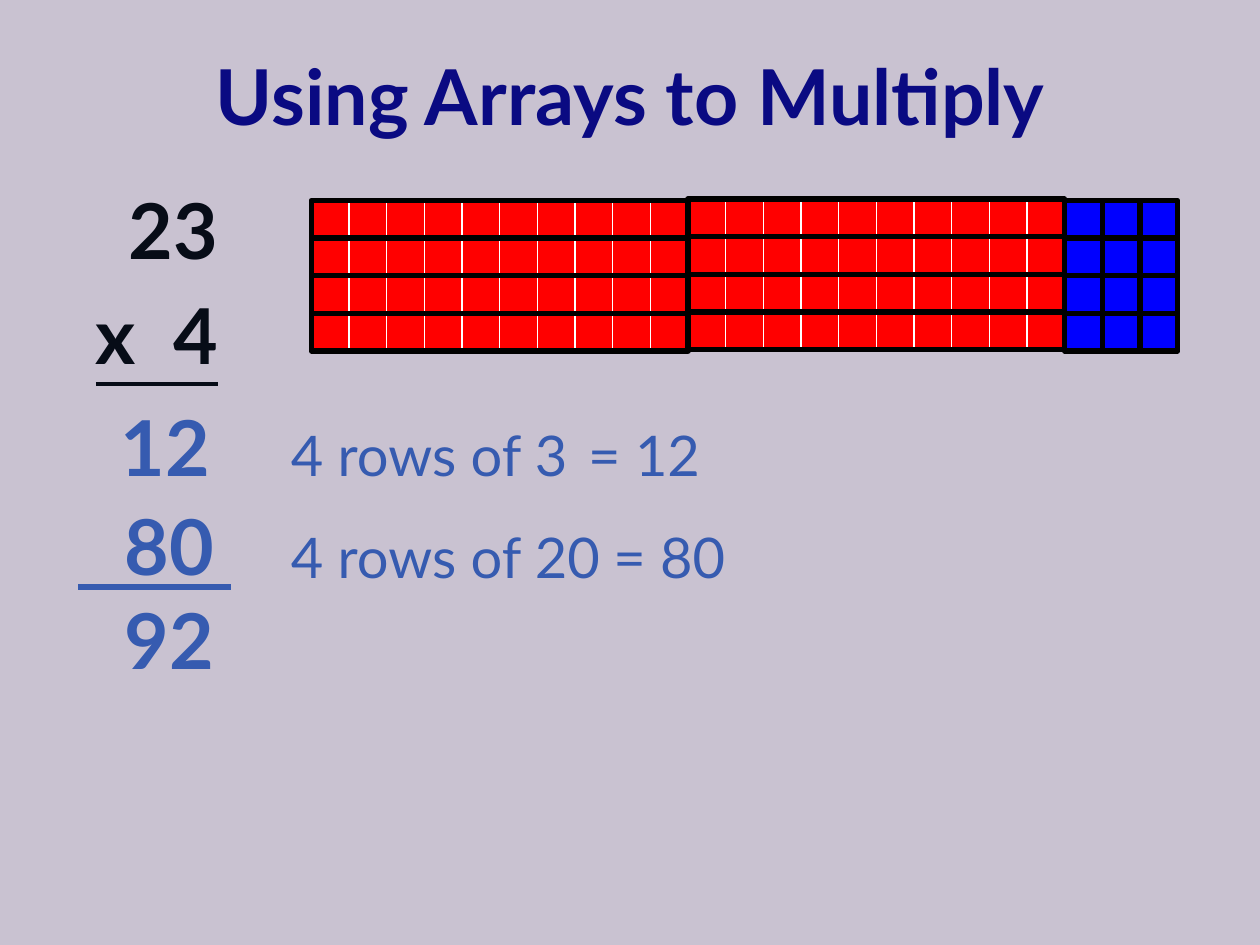
from pptx import Presentation
from pptx.dml.color import RGBColor
from pptx.enum.shapes import MSO_CONNECTOR, MSO_SHAPE
from pptx.enum.text import MSO_ANCHOR, PP_ALIGN
from pptx.oxml.ns import qn
from pptx.util import Inches, Pt
from lxml import etree

RECT = MSO_SHAPE.RECTANGLE
STRAIGHT = MSO_CONNECTOR.STRAIGHT
LEFT, CENTER, RIGHT = PP_ALIGN.LEFT, PP_ALIGN.CENTER, PP_ALIGN.RIGHT
TOP, MIDDLE = MSO_ANCHOR.TOP, MSO_ANCHOR.MIDDLE

THEME = {
    "font": "Lato", "big": 44, "medium": 32,
    "background": "C9C2D1", "title": "0A0A82", "ink": "070C17",
    "answer": "365BB0", "tens": "FF0000", "ones": "0000FF",
    "grid": "FFFFFF", "outline": "000000",
    "thin": 0.75, "thick": 3, "sum": 3.75,
}

# Content: text with its left, top and width
TITLE = "Using Arrays to Multiply"
PROBLEM = ["23", "x  4"]
RESULTS = [("12", 0.86, 3.12), ("80", 0.89, 3.91), ("92", 0.89, 4.65)]
STEPS = [
    ("4 rows of 3", 2.21, 3.29, 2.98), ("4 rows of 20", 2.21, 4.1, 2.98),
    ("= 12", 4.57, 3.29, 1.2), ("= 80", 4.77, 4.1, 1.2),
]
SUM_LINE = (0.62, 1.83, 4.66)

# Array: 4 rows of 23, as two blocks of ten and one of three
ROWS, TEN, ONES = 4, 10, 3
CELL = 0.299
ARRAY_LEFT, ARRAY_TOP = 2.47, 1.58


def color(name):
    return RGBColor.from_string(THEME[name])


def add_text(s, lines, box, size, ink, bold=False, align=LEFT, anchor=TOP):
    tf = s.shapes.add_textbox(*map(Inches, box)).text_frame
    tf.word_wrap = True
    tf.vertical_anchor = anchor
    tf.text = "\n".join(lines)
    for p in tf.paragraphs:
        p.alignment = align
        font = p.runs[0].font
        font.name, font.size, font.bold = THEME["font"], Pt(THEME[size]), bold
        font.color.rgb = color(ink)
    return tf


def add_rect(group, x, y, w, h, fill, line, width):
    sp = group.shapes.add_shape(RECT, *map(Inches, (x, y, w, h)))
    sp.shadow.inherit = False
    if fill:
        sp.fill.solid()
        sp.fill.fore_color.rgb = color(fill)
    else:
        sp.fill.background()
    sp.line.color.rgb = color(line)
    sp.line.width = Pt(THEME[width])


def add_cells(s, left, top, columns, fill, line, width):
    group = s.shapes.add_group_shape()
    for row in range(ROWS):
        for col in range(columns):
            add_rect(group, left + col * CELL, top + row * CELL,
                     CELL, CELL, fill, line, width)


def add_row_frames(s, left, top):
    group = s.shapes.add_group_shape()
    for row in range(ROWS):
        add_rect(group, left, top + row * CELL, TEN * CELL, CELL,
                 None, "outline", "thick")


def main():
    prs = Presentation()
    prs.slide_width, prs.slide_height = Inches(10), Inches(7.5)
    s = prs.slides.add_slide(prs.slide_layouts[6])
    s.background.fill.solid()
    s.background.fill.fore_color.rgb = color("background")

    # Title and the multiplication problem
    add_text(s, [TITLE], (0.17, 0.17, 9.67, 1.17), "big", "title",
             True, CENTER, MIDDLE)
    tf = add_text(s, PROBLEM, (0.08, 1.4, 1.75, 2.17), "big", "ink",
                  True, RIGHT)
    p = tf.paragraphs[-1]
    p.space_before = Pt(7)
    p.runs[0].font.underline = True

    # Partial products, their explanations and the sum line
    for text, x, y, w in STEPS:
        add_text(s, [text], (x, y, w, 0.63), "medium", "answer")
    for text, x, y in RESULTS:
        add_text(s, [text], (x, y, 1.2, 0.83), "big", "answer", True)
    x1, x2, y = SUM_LINE
    line = s.shapes.add_connector(STRAIGHT, *map(Inches, (x1, y, x2, y)))
    line.line.color.rgb = color("answer")
    line.line.width = Pt(THEME["sum"])
    etree.SubElement(line._element.spPr, qn("a:effectLst"))

    # Ones, then tens, then the frames around each row of ten
    block = TEN * CELL
    add_cells(s, ARRAY_LEFT + 2 * block, ARRAY_TOP + 0.01, ONES,
              "ones", "outline", "thick")
    for i in range(2):
        add_cells(s, ARRAY_LEFT + i * block, ARRAY_TOP, TEN,
                  "tens", "grid", "thin")
    for i in range(2):
        add_row_frames(s, ARRAY_LEFT + i * block, ARRAY_TOP + 0.01 * (1 - i))

    prs.save("out.pptx")


if __name__ == "__main__":
    main()
